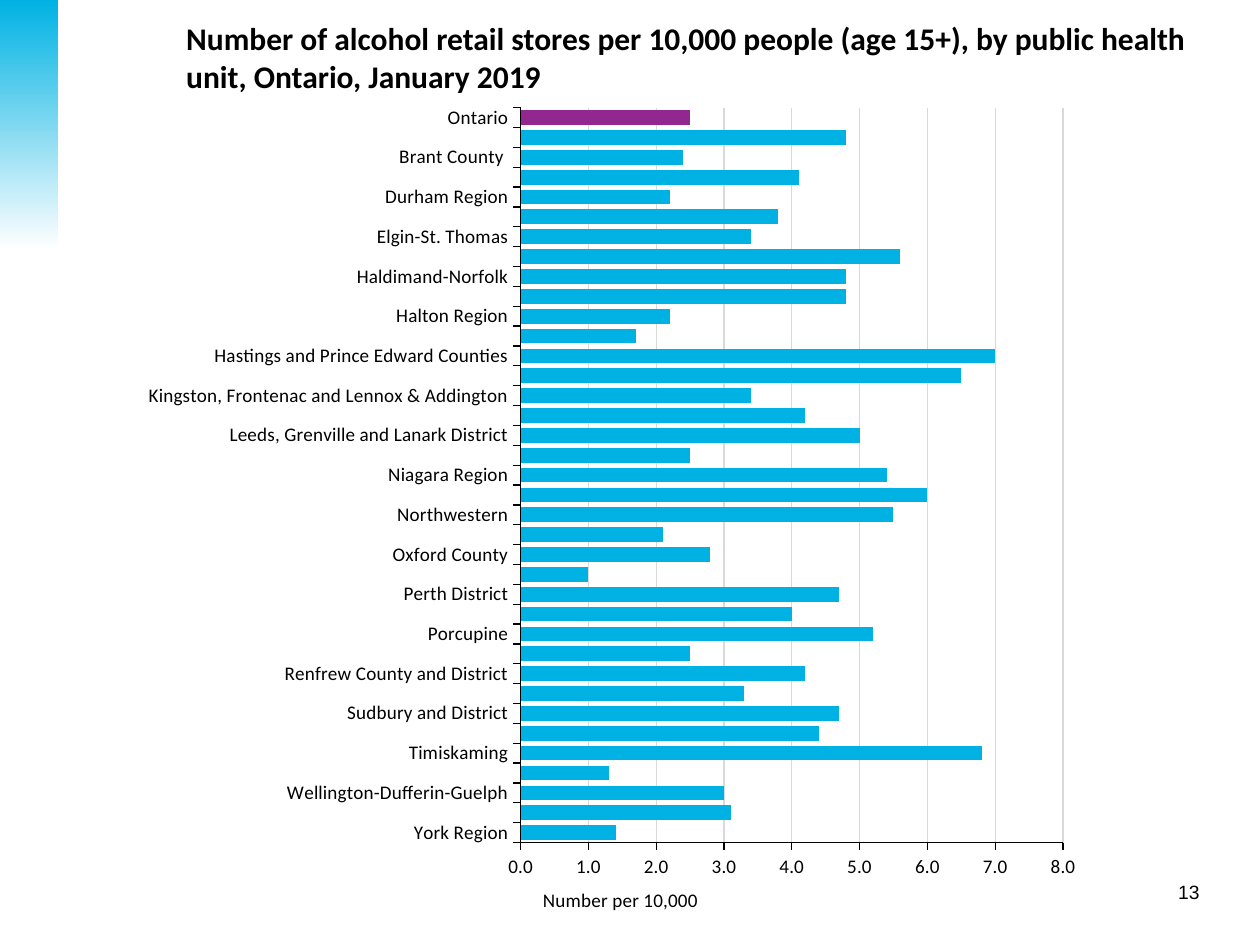
from lxml import etree
from pptx import Presentation
from pptx.chart.data import CategoryChartData
from pptx.dml.color import RGBColor
from pptx.enum.chart import XL_CHART_TYPE as ChartType, XL_TICK_MARK as TickMark
from pptx.enum.shapes import MSO_SHAPE as Preset
from pptx.enum.text import MSO_ANCHOR as Anchor, PP_ALIGN as Align
from pptx.oxml.ns import qn
from pptx.util import Inches, Pt

TITLE = ("Number of alcohol retail stores per 10,000 people (age 15+), "
         "by public health unit, Ontario, January 2019")
AXIS_TITLE = "Number per 10,000"
PAGE_NUMBER = "13"
STORES = [
    ("York Region", 1.4),
    ("Windsor-Essex County", 3.1),
    ("Wellington-Dufferin-Guelph", 3.0),
    ("Toronto", 1.3),
    ("Timiskaming", 6.8),
    ("Thunder Bay District", 4.4),
    ("Sudbury and District", 4.7),
    ("Simcoe Muskoka District", 3.3),
    ("Renfrew County and District", 4.2),
    ("Region of Waterloo", 2.5),
    ("Porcupine", 5.2),
    ("Peterborough County-City", 4.0),
    ("Perth District", 4.7),
    ("Peel", 1.0),
    ("Oxford County", 2.8),
    ("Ottawa", 2.1),
    ("Northwestern", 5.5),
    ("North Bay Parry Sound District", 6.0),
    ("Niagara Region", 5.4),
    ("Middlesex-London", 2.5),
    ("Leeds, Grenville and Lanark District", 5.0),
    ("Lambton", 4.2),
    ("Kingston, Frontenac and Lennox & Addington", 3.4),
    ("Huron County", 6.5),
    ("Hastings and Prince Edward Counties", 7.0),
    ("Hamilton", 1.7),
    ("Halton Region", 2.2),
    ("Haliburton, Kawartha, Pine Ridge District", 4.8),
    ("Haldimand-Norfolk", 4.8),
    ("Grey Bruce ", 5.6),
    ("Elgin-St. Thomas", 3.4),
    ("Eastern Ontario", 3.8),
    ("Durham Region", 2.2),
    ("Chatham-Kent", 4.1),
    ("Brant County ", 2.4),
    ("Algoma", 4.8),
    ("Ontario", 2.5),
]
HIGHLIGHT = "Ontario"
BLUE, PURPLE, GRID, BLACK, WHITE = "00B2E3", "92278F", "D9D9D9", "000000", "FFFFFF"
BODY_FONT, NUMBER_FONT = "Calibri", "Arial"
BOXES = {
    "band": (0, 0, 0.46, 1.98),
    "title": (1.38, 0.11, 8.46, 0.68),
    "chart": (1.18, 0.79, 7.48, 6.5),
    "number": (8.45, 6.93, 1.17, 0.29),
}
PLOT_SHARES = {"x": 0.39, "y": 0.01, "w": 0.58, "h": 0.9}
AXIS_TITLE_SHARES = {"x": 0.41, "y": 0.96}


def color(value):
    """Turn a hex string into a colour."""
    return RGBColor.from_string(value)


def place(name):
    """Give the position and size of a named part."""
    return [Inches(length) for length in BOXES[name]]


def style_font(font, name, size, bold=False):
    """Set face, size and weight in black."""
    font.name, font.size, font.bold = name, Pt(size), bold
    font.color.rgb = color(BLACK)


def style_line(line, value):
    """Draw a thin line in one colour."""
    line.color.rgb = color(value)
    line.width = Pt(0.75)


def add_text(slide, name, text, face, size, bold=False, align=Align.LEFT):
    """Add a wrapped, vertically centred text box."""
    frame = slide.shapes.add_textbox(*place(name)).text_frame
    frame.word_wrap = True
    frame.vertical_anchor = Anchor.MIDDLE
    paragraph = frame.paragraphs[0]
    paragraph.text, paragraph.alignment = text, align
    style_font(paragraph.font, face, size, bold)


def add_band(slide):
    """Add the fading band in the corner."""
    band = slide.shapes.add_shape(Preset.RECTANGLE, *place("band"))
    band.shadow.inherit = False
    band.line.fill.background()
    band.fill.gradient()
    band.fill.gradient_angle = 270
    for stop, position, value in zip(band.fill.gradient_stops, (0, 1), (BLUE, WHITE)):
        stop.position, stop.color.rgb = position, color(value)


def set_layout(parent, shares, inner=False):
    """Fix a chart part at shares of the chart's size."""
    for old in parent.findall(qn("c:layout")):
        parent.remove(old)
    layout = etree.Element(qn("c:layout"))
    manual = etree.SubElement(layout, qn("c:manualLayout"))
    settings = [("layoutTarget", "inner")] if inner else []
    settings += [(f"{key}Mode", "edge") for key in ("x", "y")]
    settings += shares.items()
    for tag, value in settings:
        etree.SubElement(manual, qn(f"c:{tag}")).set("val", str(value))
    text = parent.find(qn("c:tx"))
    parent.insert(0 if text is None else 1, layout)


def add_bar_chart(slide):
    """Add the bar chart of stores by health unit."""
    names, values = zip(*STORES)
    data = CategoryChartData(number_format="0.0")
    data.categories = names
    data.add_series("Series 1", values)
    chart = slide.shapes.add_chart(ChartType.BAR_CLUSTERED, *place("chart"), data).chart
    chart.has_legend = chart.has_title = False
    style_font(chart.font, BODY_FONT, 11)

    plot = chart.plots[0]
    plot.gap_width, plot.vary_by_categories = 35, False
    series = plot.series[0]
    series.invert_if_negative = False
    highlight = series.points[names.index(HIGHLIGHT)]
    for part, value in ((series, BLUE), (highlight, PURPLE)):
        part.format.fill.solid()
        part.format.fill.fore_color.rgb = color(value)

    category_axis, value_axis = chart.category_axis, chart.value_axis
    for axis in (category_axis, value_axis):
        axis.major_tick_mark, axis.minor_tick_mark = TickMark.OUTSIDE, TickMark.NONE
        style_line(axis.format.line, BLACK)
        style_font(axis.tick_labels.font, BODY_FONT, 11)
    category_axis.has_major_gridlines = False
    skip = etree.Element(qn("c:tickLblSkip"))
    skip.set("val", "2")
    category_axis._element.find(qn("c:noMultiLvlLbl")).addprevious(skip)

    value_axis.minimum_scale, value_axis.maximum_scale, value_axis.major_unit = 0, 8, 1
    value_axis.tick_labels.number_format = "0.0"
    value_axis.tick_labels.number_format_is_linked = False
    style_line(value_axis.major_gridlines.format.line, GRID)
    paragraph = value_axis.axis_title.text_frame.paragraphs[0]
    paragraph.text = AXIS_TITLE
    style_font(paragraph.font, BODY_FONT, 11)
    set_layout(value_axis.axis_title._element, AXIS_TITLE_SHARES)
    set_layout(chart._chartSpace.chart.plotArea, PLOT_SHARES, inner=True)


def main():
    """Build and save the slide."""
    presentation = Presentation()
    presentation.slide_width, presentation.slide_height = Inches(10), Inches(7.5)
    slide = presentation.slides.add_slide(presentation.slide_layouts[6])
    add_text(slide, "number", PAGE_NUMBER, NUMBER_FONT, 11, align=Align.RIGHT)
    add_band(slide)
    add_text(slide, "title", TITLE, BODY_FONT, 18, bold=True)
    add_bar_chart(slide)
    presentation.save("out.pptx")


if __name__ == "__main__":
    main()
